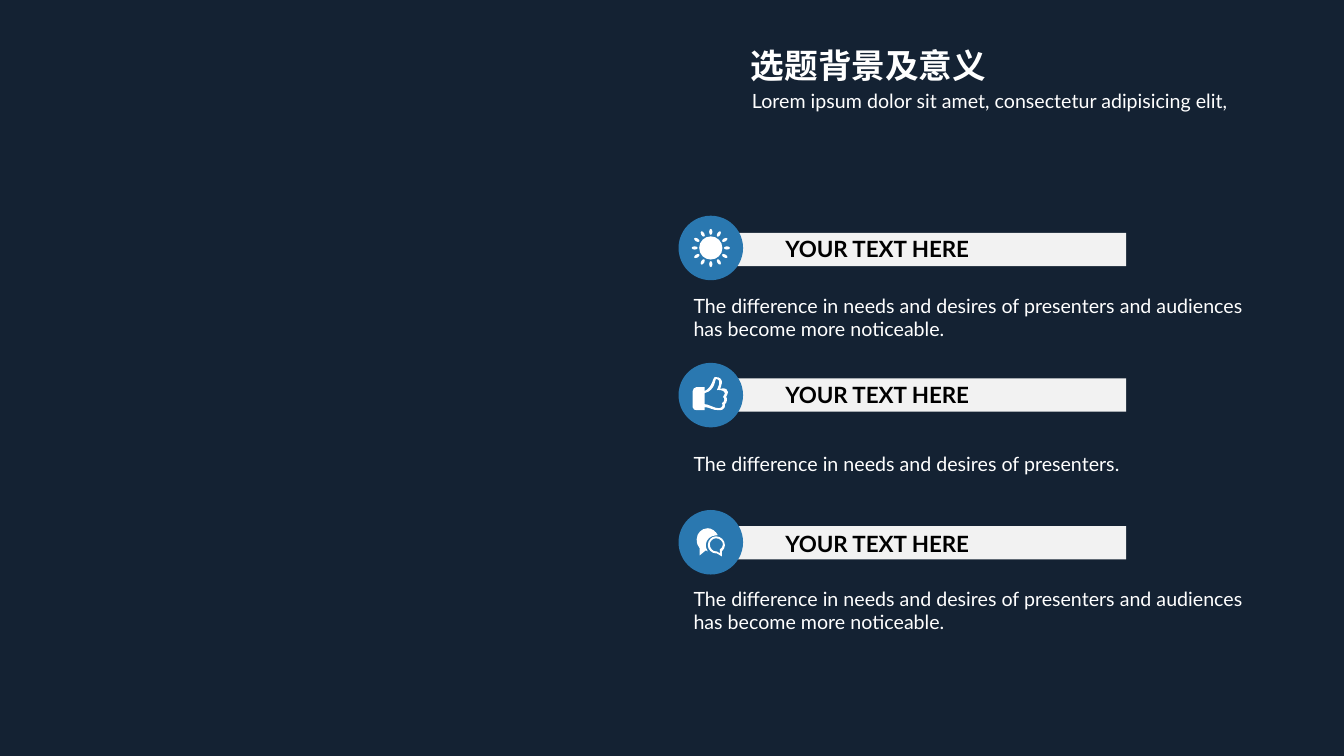
import math

import lxml.etree
import pptx
import pptx.dml.color
import pptx.enum.shapes
import pptx.enum.text
import pptx.oxml.ns
import pptx.util

COLUMNS, ROWS = 1333, 750
CELL = pptx.util.Inches(0.01)
NAVY, BLUE, PALE, WHITE, BLACK = "142233", "2A78B0", "F2F2F2", "FFFFFF", "000000"
SHAPES = pptx.enum.shapes.MSO_SHAPE
MEDALLION = 64
ITEM_TOP, ITEM_PITCH = 214, 146
LONG_TEXT = ("The difference in needs and desires of presenters and audiences "
             "has become more noticeable.")
SHORT_TEXT = "The difference in needs and desires of presenters."

THUMB = [
    [(33, 20), (35, 20, 34, 26, 32, 27), (32, 28, 33, 33, 26, 33), (19, 33, 17, 30, 12, 30),
     (12, 33), (4, 33), (2, 33, 0, 32, 0, 30), (0, 14), (0, 12, 2, 10, 4, 10), (12, 10),
     (12, 14), (20, 10, 20, 0, 22, 0), (34, 0, 27, 12, 27, 12), (27, 12, 34, 9, 35, 15),
     (34, 17, 35, 18, 33, 20)],
    [(24, 13), (24, 13, 30, 2, 23, 2), (22, 2, 23, 13, 12, 16), (12, 27),
     (16, 27, 21, 31, 26, 31), (30, 31, 30, 27, 29, 26), (32, 25, 32, 20, 30, 20),
     (31, 18, 32, 17, 32, 16), (31, 12, 24, 13, 24, 13)],
]
BUBBLES = [
    [(25, 23), (25, 28), (20, 25), (19, 25), (15, 25, 11, 21, 11, 17), (11, 12, 15, 8, 19, 8),
     (24, 8, 28, 12, 28, 17), (28, 19, 27, 21, 25, 23)],
    [(19, 10), (16, 10, 13, 13, 13, 16), (13, 20, 16, 23, 19, 23), (20, 23), (23, 25), (23, 21),
     (25, 20, 26, 18, 26, 16), (26, 13, 23, 10, 19, 10)],
    [(9, 17), (9, 19, 10, 21, 11, 23), (9, 22), (3, 27), (3, 20), (1, 18, 0, 15, 0, 11),
     (0, 5, 5, 0, 11, 0), (15, 0, 19, 3, 21, 7), (20, 7), (14, 7, 9, 11, 9, 17)],
]


def colour(value):
    """Turn a hex string into a colour."""
    return pptx.dml.color.RGBColor.from_string(value)


def paint(shape, fill):
    """Give a shape a flat fill without outline or shadow."""
    shape.shadow.inherit = False
    shape.fill.solid()
    shape.fill.fore_color.rgb = colour(fill)
    shape.line.fill.background()


def add_block(page, kind, box, fill):
    """Add a plain preset shape in a box of grid cells."""
    paint(page.shapes.add_shape(kind, *(round(side * CELL) for side in box)), fill)


def add_text(page, box, text, size, ink=WHITE, bold=False, spacing=None, before=None):
    """Add one paragraph of text in a box of grid cells."""
    frame = page.shapes.add_textbox(*(round(side * CELL) for side in box)).text_frame
    frame.word_wrap = True
    frame.auto_size = pptx.enum.text.MSO_AUTO_SIZE.SHAPE_TO_FIT_TEXT
    para = frame.paragraphs[0]
    para.line_spacing = spacing
    para.space_before = before
    span = para.add_run()
    span.text = text
    span.font.name = "Lato"
    span.font.size = pptx.util.Pt(size)
    span.font.bold = bold
    span.font.color.rgb = colour(ink)


def oval(centre, distance, angle, along, across):
    """Return an ellipse of four curves, turned to an angle at a distance from a centre."""
    def place(x, y):
        out, side = distance + along * x, across * y
        return (centre + out * math.cos(angle) - side * math.sin(angle),
                centre + out * math.sin(angle) + side * math.cos(angle))

    bend = 0.55
    contour = [place(1, 0)]
    for x, y in [(1, 0), (0, 1), (-1, 0), (0, -1)]:
        contour.append(place(x - bend * y, y + bend * x)
                       + place(bend * x - y, bend * y + x) + place(-y, x))
    return contour


def sun_contours(centre=19, rays=12):
    """Return a disc with a ring of evenly spaced rays."""
    ring = [oval(centre, 16, math.tau * ray / rays, 3, 1.6) for ray in range(rays)]
    return [oval(centre, 0, 0, 11.5, 11.5)] + ring


def bend_segment(segment, piece):
    """Replace a straight segment of an outline by a cubic curve."""
    curve = lxml.etree.Element(pptx.oxml.ns.qn("a:cubicBezTo"))
    for x, y in zip(piece[::2], piece[1::2]):
        lxml.etree.SubElement(curve, pptx.oxml.ns.qn("a:pt"),
                              x=str(round(x * CELL)), y=str(round(y * CELL)))
    segment.getparent().replace(segment, curve)


def add_icon(page, left, top, contours):
    """Add a white icon of lines and curves with its corner at a grid cell."""
    ends = [[(piece[-2] * CELL, piece[-1] * CELL) for piece in contour] for contour in contours]
    builder = page.shapes.build_freeform(*ends[0][0], scale=1.0)
    for index, outline in enumerate(ends):
        if index:
            builder.move_to(*outline[0])
        builder.add_line_segments(outline[1:], close=True)
    icon = builder.convert_to_shape(round(left * CELL), round(top * CELL))
    paint(icon, WHITE)
    segments = list(icon.element.iter(pptx.oxml.ns.qn("a:lnTo")))
    pieces = [piece for contour in contours for piece in contour[1:]]
    for segment, piece in zip(segments, pieces):
        if len(piece) == 6:
            bend_segment(segment, piece)


def add_heading(page, left, top):
    """Add the title with its subtitle below."""
    add_text(page, (left, top + 47, 500, 38),
             "Lorem ipsum dolor sit amet, consectetur adipisicing elit,", 14,
             spacing=1.2, before=pptx.util.Pt(10))
    add_text(page, (left - 1, top, 290, 54), "选题背景及意义", 24, bold=True, spacing=1.2)


def add_item(page, left, top, contours, inset, bar_drop, label_drop, text, text_drop, text_size):
    """Add one point: a bar with label, a medallion with icon, and the text below."""
    add_block(page, SHAPES.RECTANGLE, (left + 43, top + bar_drop, 401, 33), PALE)
    add_block(page, SHAPES.OVAL, (left, top, MEDALLION, MEDALLION), BLUE)
    add_text(page, (left + 5, top + text_drop, *text_size), text, 14)
    add_icon(page, left + inset, top + inset, contours)
    add_text(page, (left + 96, top + label_drop, 270, 37), "YOUR TEXT HERE", 16, BLACK, bold=True)


def main():
    """Build the deck and save it."""
    deck = pptx.Presentation()
    deck.slide_width, deck.slide_height = COLUMNS * CELL, ROWS * CELL
    page = deck.slides.add_slide(deck.slide_layouts[6])
    page.background.fill.solid()
    page.background.fill.fore_color.rgb = colour(NAVY)
    add_heading(page, 736, 32)
    items = [
        (sun_contours(), 13, 17, 14, LONG_TEXT, 72.5, (598, 57)),
        (THUMB, 14, 15.5, 13, SHORT_TEXT, 83.5, (598, 34)),
        (BUBBLES, 18, 16, 15, LONG_TEXT, 71, (582, 57)),
    ]
    for index, item in enumerate(items):
        add_item(page, 673, ITEM_TOP + index * ITEM_PITCH, *item)
    deck.save("out.pptx")


if __name__ == "__main__":
    main()
